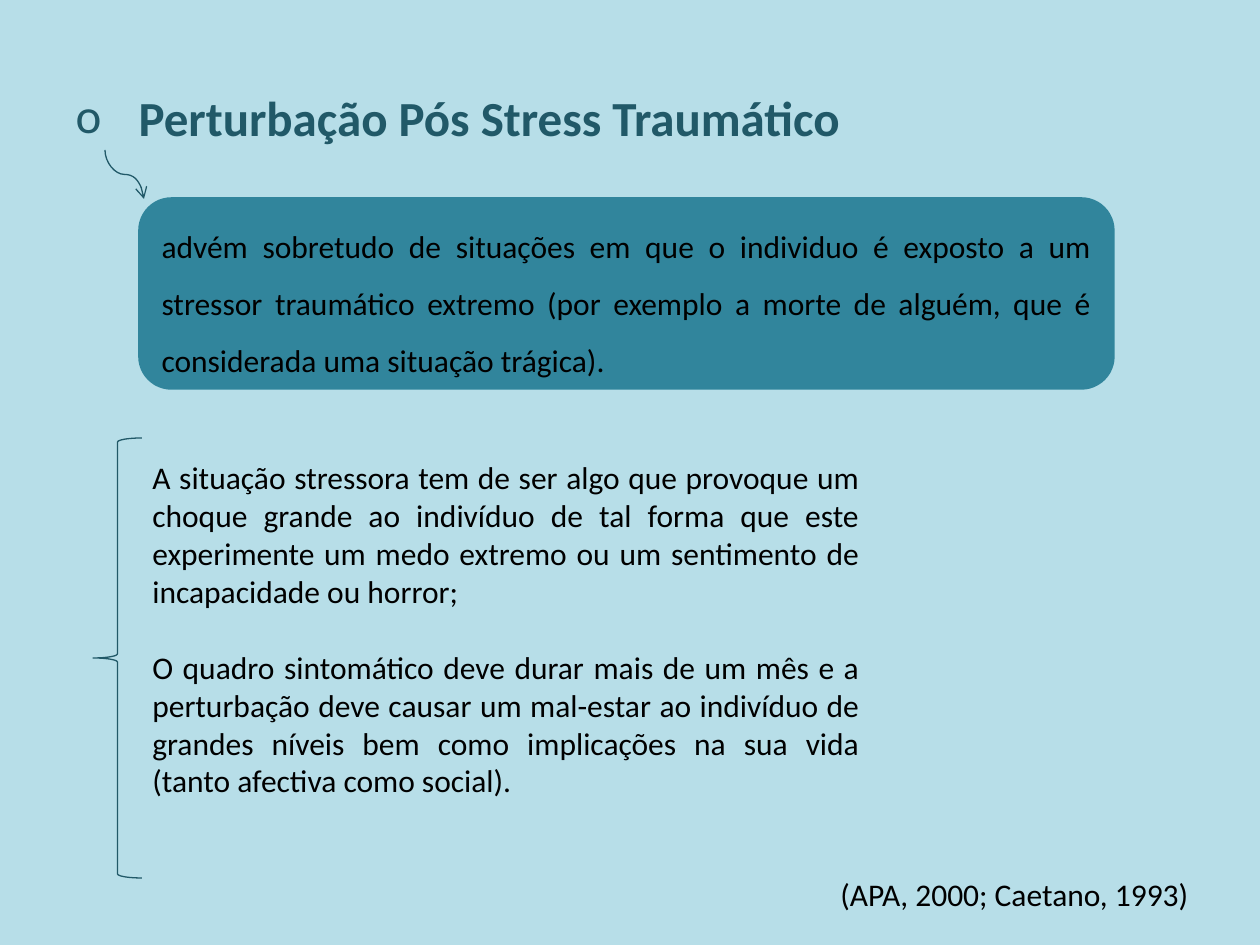
from dataclasses import dataclass

from lxml import etree
from pptx import Presentation, util as u
from pptx.dml.color import RGBColor
from pptx.enum import shapes, text
from pptx.oxml.ns import qn

EMU_PER_PX = 914400 / 126
COLORS = {"background": "B7DEE8", "accent": "215968", "panel": "31859C", "body": "000000"}
BODY_FONT = {"name": "Calibri", "size": u.Pt(18), "bold": False}
TITLE_FONT = {"name": "Calibri", "size": u.Pt(28), "bold": True}
JUSTIFIED = {"alignment": text.PP_ALIGN.JUSTIFY}


@dataclass(frozen=True)
class Area:
    left: int
    top: int
    width: int
    height: int

    def emu(self) -> list[u.Emu]:
        return [px(n) for n in (self.left, self.top, self.width, self.height)]


@dataclass(frozen=True)
class TextBlock:
    area: Area
    paragraphs: tuple[str, ...]
    format: dict
    wrap: bool = True


TITLE_AREA = Area(63, 38, 1134, 158)
PANEL_AREA = Area(140, 199, 973, 189)
BRACE_AREA = Area(93, 438, 49, 440)
ARROW_AREA = Area(100, 155, 49, 39)  # before the quarter turn

DEFINITION = (
    "advém sobretudo de situações em que o individuo é exposto a um stressor traumático "
    "extremo (por exemplo a morte de alguém, que é considerada uma situação trágica).",
)
BLOCKS = (
    TextBlock(
        Area(140, 452, 732, 432),
        (
            "A situação stressora tem de ser algo que provoque um choque grande ao indivíduo "
            "de tal forma que este experimente um medo extremo ou um sentimento de "
            "incapacidade ou horror;",
            "O quadro sintomático deve durar mais de um mês e a perturbação deve causar um "
            "mal-estar ao indivíduo de grandes níveis bem como implicações na sua vida "
            "(tanto afectiva como social).",
        ),
        JUSTIFIED,
    ),
    TextBlock(Area(828, 869, 391, 50), ("(APA, 2000; Caetano, 1993)",), {}, wrap=False),
)


def px(length: int) -> u.Emu:
    return u.Emu(round(length * EMU_PER_PX))


def color(name: str) -> RGBColor:
    return RGBColor.from_string(COLORS[name])


def apply(target, values: dict) -> None:
    for name, value in values.items():
        setattr(target, name, value)


def write(frame, paragraphs: tuple[str, ...], font: dict, ink: str, format: dict) -> None:
    for index, words in enumerate(paragraphs):
        para = frame.add_paragraph() if index else frame.paragraphs[0]
        apply(para, format)
        if index:
            para.space_before = u.Pt(22)
        span = para.add_run()
        span.text = words
        apply(span.font, font)
        span.font.color.rgb = color(ink)


def set_line(shape, ink: str, width: float) -> None:
    shape.line.color.rgb = color(ink)
    shape.line.width = u.Pt(width)


def add_title(page) -> None:
    title = page.shapes.title
    apply(title, dict(zip(("left", "top", "width", "height"), TITLE_AREA.emu())))
    frame = title.text_frame
    frame.vertical_anchor = text.MSO_ANCHOR.MIDDLE
    write(frame, ("Perturbação Pós Stress Traumático",), TITLE_FONT, "accent",
          {"alignment": text.PP_ALIGN.LEFT})
    props = frame.paragraphs[0]._p.get_or_add_pPr()
    props.set("marL", str(px(63)))
    props.set("indent", str(-px(63)))
    etree.SubElement(props, qn("a:buFont")).set("typeface", "Calibri")
    etree.SubElement(props, qn("a:buChar")).set("char", "o")


def add_arrow(page, area: Area) -> None:
    """Curved arrow that leaves and arrives vertically."""
    left, top, width, height = area.emu()
    arrow = page.shapes.add_connector(
        shapes.MSO_CONNECTOR.CURVE, left + width, top, left, top + height)
    set_line(arrow, "accent", 0.75)
    props = arrow._element.spPr
    props.find(qn("a:xfrm")).set("rot", str(270 * 60000))
    etree.SubElement(props.find(qn("a:ln")), qn("a:tailEnd")).set("type", "arrow")
    etree.SubElement(props, qn("a:effectLst"))


def add_shape(page, kind, area: Area, ink: str, width: float):
    shape = page.shapes.add_shape(kind, *area.emu())
    shape.shadow.inherit = False
    shape.fill.background()
    set_line(shape, ink, width)
    return shape


def add_panel(page) -> None:
    panel = add_shape(page, shapes.MSO_SHAPE.ROUNDED_RECTANGLE, PANEL_AREA, "panel", 2)
    panel.fill.solid()
    panel.fill.fore_color.rgb = color("panel")
    panel.text_frame.word_wrap = True
    panel.text_frame.vertical_anchor = text.MSO_ANCHOR.MIDDLE
    write(panel.text_frame, DEFINITION, BODY_FONT, "body", {**JUSTIFIED, "line_spacing": 1.5})


def add_text(page, block: TextBlock) -> None:
    box = page.shapes.add_textbox(*block.area.emu())
    box.text_frame.word_wrap = block.wrap
    write(box.text_frame, block.paragraphs, BODY_FONT, "body", block.format)


def main() -> None:
    deck = Presentation()
    deck.slide_width, deck.slide_height = px(1260), px(945)
    page = deck.slides.add_slide(deck.slide_layouts.get_by_name("Title Only"))
    page.background.fill.solid()
    page.background.fill.fore_color.rgb = color("background")

    add_title(page)
    add_arrow(page, ARROW_AREA)
    add_panel(page)
    body, citation = BLOCKS
    add_text(page, body)
    add_shape(page, shapes.MSO_SHAPE.LEFT_BRACE, BRACE_AREA, "accent", 0.75)
    add_text(page, citation)
    deck.save("out.pptx")


if __name__ == "__main__":
    main()
